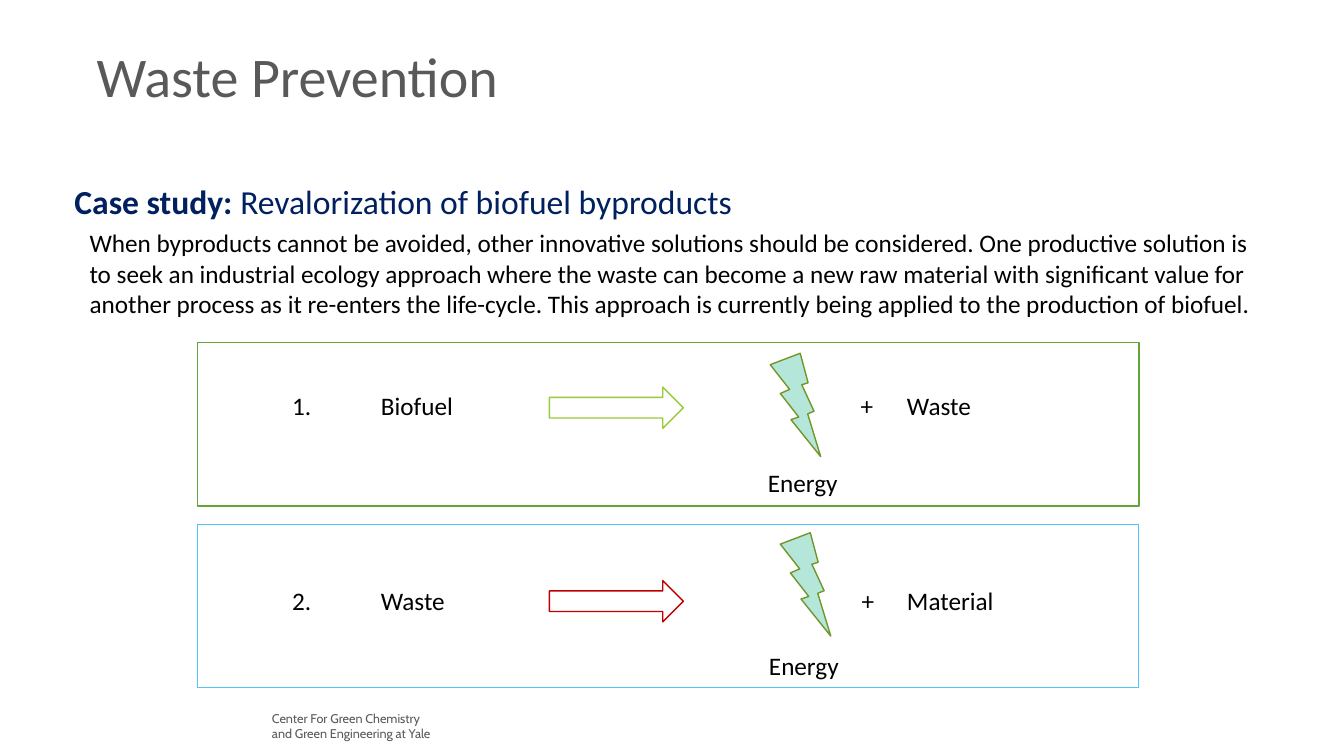
from pptx import Presentation
from pptx.dml.color import RGBColor
from pptx.enum.shapes import MSO_SHAPE
from pptx.enum.text import MSO_ANCHOR, MSO_AUTO_SIZE
from pptx.util import Pt

RECTANGLE = MSO_SHAPE.RECTANGLE
ARROW = MSO_SHAPE.RIGHT_ARROW
BOLT = MSO_SHAPE.LIGHTNING_BOLT
MIDDLE = MSO_ANCHOR.MIDDLE
GROW = MSO_AUTO_SIZE.SHAPE_TO_FIT_TEXT

COLORS = {
    "black": "000000", "gray": "595959", "navy": "002060", "white": "FFFFFF",
    "green": "63A537", "blue": "51C3F9", "lime": "99CB38", "red": "C00000",
    "mint": "B4E6DA", "olive": "719629",
}


class SlideBuilder:
    """Draws styled text and shapes on the current slide, in points."""

    def __init__(self, slide, font="Calibri"):
        self.slide = slide
        self.font = font

    def color(self, name):
        return RGBColor.from_string(COLORS[name])

    def text(self, box, paragraphs, size=18, color="black", font=None, wrap=False):
        frame = self.slide.shapes.add_textbox(*map(Pt, box)).text_frame
        frame.word_wrap = wrap
        frame.auto_size = GROW
        for index, runs in enumerate(paragraphs):
            paragraph = frame.add_paragraph() if index else frame.paragraphs[0]
            paragraph.font.size = Pt(size)
            paragraph.font.name = font or self.font
            paragraph.font.color.rgb = self.color(color)
            for words, bold in runs:
                run = paragraph.add_run()
                run.text = words
                if bold:
                    run.font.bold = True
        return frame

    def label(self, left, top, width, words):
        return self.text((left, top, width, 29), [[(words, False)]])

    def shape(self, kind, box, line, fill=None, weight=1, rotation=0):
        shape = self.slide.shapes.add_shape(kind, *map(Pt, box))
        shape.shadow.inherit = False
        shape.rotation = rotation
        shape.line.color.rgb = self.color(line)
        shape.line.width = Pt(weight)
        if fill:
            shape.fill.solid()
            shape.fill.fore_color.rgb = self.color(fill)
        else:
            shape.fill.background()

    def process(self, number, top, frame_color, weight, arrow_color, middle, arrow_top,
                bolt, energy, plus_left, source, source_width, product, product_width):
        self.shape(RECTANGLE, (141.1, top, 672.5, 116.6), frame_color, weight=weight)
        self.shape(ARROW, (392.4, arrow_top, 95.8, 29.5), arrow_color, "white")
        self.shape(BOLT, (*bolt, 49, 69.1), "olive", "mint", rotation=12.1)
        self.label(201.6, middle, 32.4, number)
        self.label(265, middle, source_width, source)
        self.label(plus_left, middle, 23.8, "+")
        self.label(640.8, middle, product_width, product)
        self.label(*energy, 64.8, "Energy")


def main():
    presentation = Presentation()
    presentation.slide_width, presentation.slide_height = Pt(960), Pt(540)
    builder = SlideBuilder(presentation.slides.add_slide(presentation.slide_layouts[6]))

    title = builder.text((61.9, 23.8, 324, 66.2), [[("Waste Prevention", False)]],
                         size=40, color="gray", wrap=True)
    title.auto_size = MSO_AUTO_SIZE.NONE
    title.vertical_anchor = MIDDLE
    title.paragraphs[0].line_spacing = 0.9

    builder.text((46.1, 126, 489, 36),
                 [[("Case study: ", True), ("Revalorization of biofuel byproducts", False)]],
                 size=24, color="navy")
    builder.text((56.9, 159.1, 846, 72.7), [[(
        "When byproducts cannot be avoided, other innovative solutions should be considered. "
        "One productive solution is to seek an industrial ecology approach where the waste can "
        "become a new raw material with significant value for another process as it re-enters "
        "the life-cycle. This approach is currently being applied to the production of biofuel.",
        False)]], wrap=True)

    builder.process("1.", 244.8, "green", 1, "lime", 275, 276.5, (545, 252.7),
                    (541.4, 330.5), 607.7, "Biofuel", 66.2, "Waste", 60.5)
    builder.process("2.", 374.4, "blue", 0.75, "red", 414.7, 414.7, (552.2, 380.9),
                    (542.2, 460.8), 608.4, "Waste", 60.5, "Material", 77)

    builder.text((187.2, 504, 133.9, 28.8),
                 [[("Center For Green Chemistry", False)],
                  [("and Green Engineering at Yale", False)]],
                 size=9, color="gray", font="Cabin", wrap=True)
    presentation.save("out.pptx")


if __name__ == "__main__":
    main()
